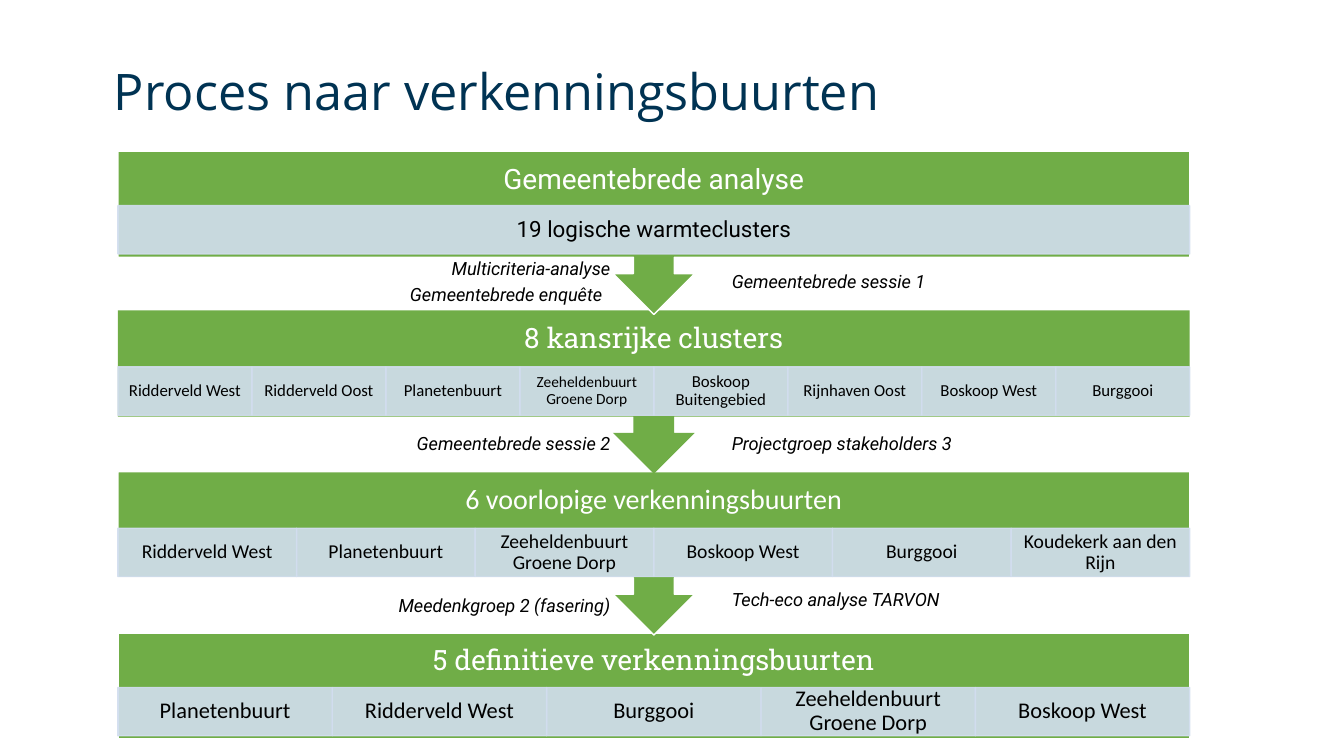
from lxml.etree import SubElement
from pptx import Presentation
from pptx.dml.color import RGBColor
from pptx.enum.shapes import MSO_SHAPE
from pptx.enum.text import MSO_ANCHOR, PP_ALIGN
from pptx.oxml.ns import qn
from pptx.util import Inches, Pt

GREEN = RGBColor(0x70, 0xAD, 0x47)
PALE = RGBColor(0xD2, 0xDE, 0xEF)
NAVY = RGBColor(0x00, 0x33, 0x53)
WHITE = RGBColor(0xFF, 0xFF, 0xFF)
BLACK = RGBColor(0x00, 0x00, 0x00)

LEFT, WIDTH = 1.17, 10.63
BOX, STEP, CELL = 1.05, 1.62, 0.48
LABEL = 0.57

STAGES = [
    dict(top=1.5, row=2.04, title="Gemeentebrede analyse", font="Roboto",
         face="Roboto", size=16, pad=0.12, cells=["19 logische warmteclusters"]),
    dict(top=3.08, row=3.64, title="8 kansrijke clusters", font="Roboto Slab",
         face="Calibri", size=12, pad=0.09, edge=False,
         cells=["Ridderveld West", "Ridderveld Oost", "Planetenbuurt",
                ("Zeeheldenbuurt Groene Dorp", 11), "Boskoop Buitengebied",
                "Rijnhaven Oost", "Boskoop West", "Burggooi"]),
    dict(top=4.68, row=5.24, title="6 voorlopige verkenningsbuurten", font="Calibri",
         face="Calibri", size=14, pad=0.11,
         cells=["Ridderveld West", "Planetenbuurt", "Zeeheldenbuurt Groene Dorp",
                "Boskoop West", "Burggooi", "Koudekerk aan den Rijn"]),
    dict(top=6.28, row=6.82, title="5 definitieve verkenningsbuurten",
         font="Roboto Slab", face="Calibri", size=16, pad=0.12, last=True,
         cells=["Planetenbuurt", "Ridderveld West", "Burggooi",
                "Zeeheldenbuurt Groene Dorp", "Boskoop West"]),
]

NOTES = [
    ("Gemeentebrede enquête", 3.49, 2.76, PP_ALIGN.RIGHT),
    ("Multicriteria-analyse", 3.57, 2.5, PP_ALIGN.RIGHT),
    ("Gemeentebrede sessie 2", 3.57, 4.24, PP_ALIGN.RIGHT),
    ("Gemeentebrede sessie 1", 7.16, 2.63, PP_ALIGN.LEFT),
    ("Projectgroep stakeholders 3", 7.16, 4.24, PP_ALIGN.LEFT),
    ("Meedenkgroep 2 (fasering)", 3.57, 5.85, PP_ALIGN.RIGHT),
    ("Tech-eco analyse TARVON", 7.16, 5.79, PP_ALIGN.LEFT),
]


def apply(target, values):
    """Set every attribute in values on the target."""
    for name, value in values.items():
        setattr(target, name, value)


def write(shape, text, font, size, color, align, pads=None,
          anchor=MSO_ANCHOR.MIDDLE, space=0.9, italic=False):
    """Put one formatted paragraph in a shape."""
    frame = shape.text_frame
    apply(frame, dict(word_wrap=True, vertical_anchor=anchor))
    if pads:
        sides = ("margin_left", "margin_top", "margin_right", "margin_bottom")
        apply(frame, {side: Inches(pad) for side, pad in zip(sides, pads)})
    para = frame.paragraphs[0]
    apply(para, dict(alignment=align, line_spacing=space))
    run = para.add_run()
    run.text = text
    apply(run.font, dict(name=font, size=Pt(size), italic=italic))
    run.font.color.rgb = color


def fade(fill):
    """Make a solid colour ninety percent opaque."""
    color = fill._xPr.find(qn("a:solidFill")).find(qn("a:srgbClr"))
    SubElement(color, qn("a:alpha")).set("val", "90000")


def block(slide, kind, box, color, edge):
    """Add a filled shape with an optional outline."""
    shape = slide.shapes.add_shape(kind, *map(Inches, box))
    shape.shadow.inherit = False
    shape.fill.solid()
    shape.fill.fore_color.rgb = color
    if edge is None:
        shape.line.fill.background()
    else:
        shape.line.color.rgb = edge
        shape.line.width = Pt(1)
    return shape


def stage(slide, top, row, title, font, face, size, pad, cells, edge=True, last=False):
    """Add a green stage and its row of cells."""
    kind = MSO_SHAPE.RECTANGLE if last else MSO_SHAPE.DOWN_ARROW_CALLOUT
    box = (LEFT, top, WIDTH, BOX if last else STEP)
    band = block(slide, kind, box, GREEN, WHITE if edge else None)
    write(band, title, font, 20, WHITE, PP_ALIGN.CENTER, (0.16, 0, 0.16, BOX - LABEL))
    wide = WIDTH / len(cells)
    for col, item in enumerate(cells):
        text, points = item if isinstance(item, tuple) else (item, size)
        cell = block(slide, MSO_SHAPE.RECTANGLE,
                     (LEFT + col * wide, row, wide, CELL), PALE, PALE)
        fade(cell.fill)
        fade(cell.line.fill)
        write(cell, text, face, points, BLACK, PP_ALIGN.CENTER, (pad, 0.02, pad, 0.02))


def label(slide, box, text, font, size, color, align, **style):
    """Add a text box."""
    shape = slide.shapes.add_textbox(*map(Inches, box))
    write(shape, text, font, size, color, align, **style)


def main():
    """Build and save the slide."""
    deck = Presentation()
    apply(deck, dict(slide_width=Inches(13.33), slide_height=Inches(7.5)))
    slide = deck.slides.add_slide(deck.slide_layouts[6])
    label(slide, (1.03, 0.4, 12.3, 1.06), "Proces naar verkenningsbuurten",
          "Open Sans", 36, NAVY, PP_ALIGN.LEFT)
    for item in reversed(STAGES):
        stage(slide, **item)
    for text, left, top, align in NOTES:
        label(slide, (left, top, 2.58, 0.32), text, "Roboto", 13, BLACK, align,
              anchor=MSO_ANCHOR.TOP, space=1.0, italic=True)
    deck.save("out.pptx")


if __name__ == "__main__":
    main()
